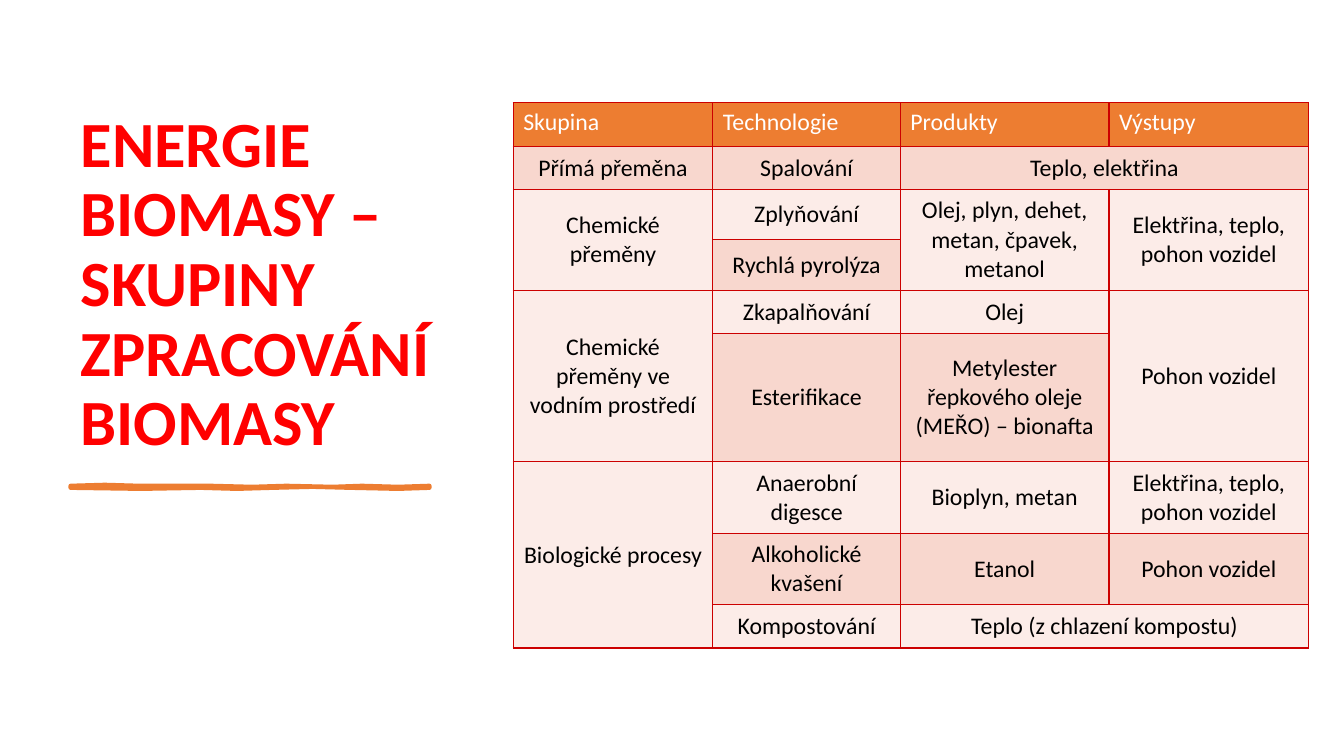
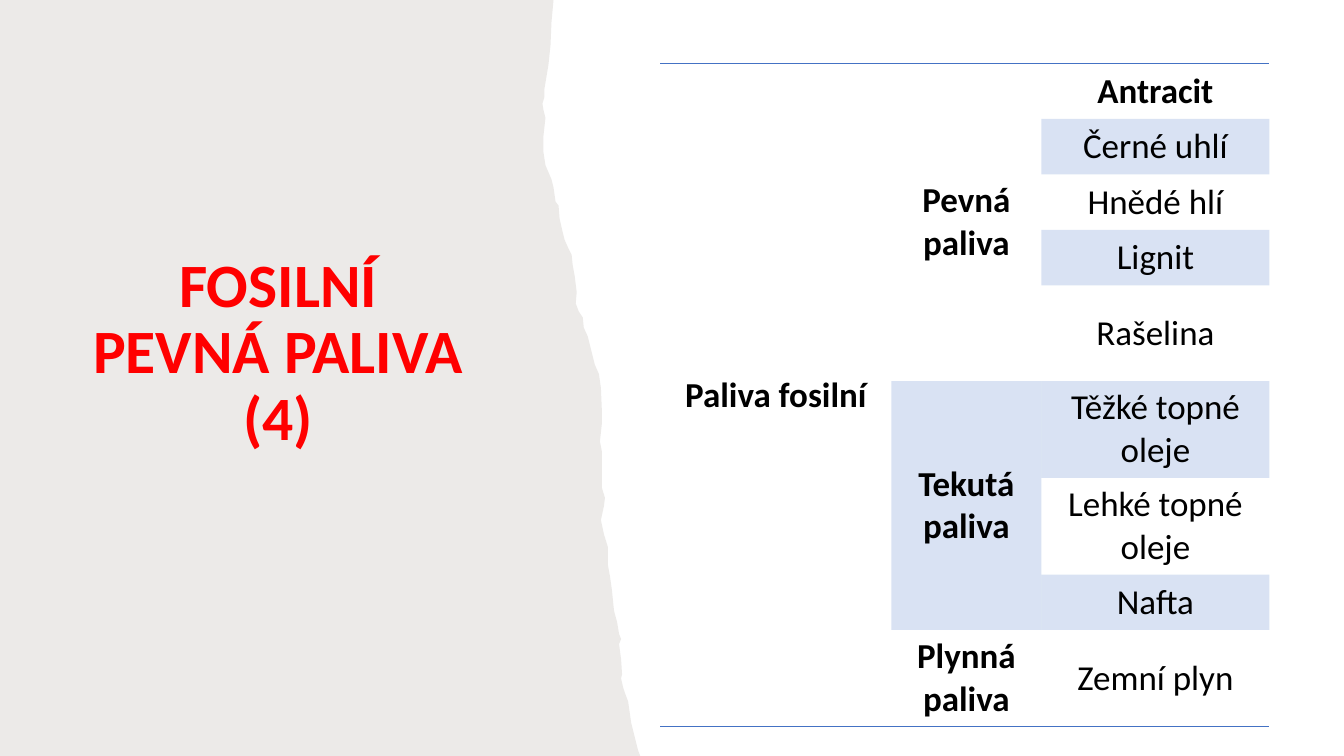
import lxml.etree
import pptx
import pptx.dml.color
import pptx.enum.text
import pptx.oxml.ns
import pptx.util

RGB = pptx.dml.color.RGBColor
ALIGN = pptx.enum.text.PP_ALIGN
ANCHOR = pptx.enum.text.MSO_ANCHOR
qn = pptx.oxml.ns.qn

# Shared look; 100 px make one inch
PX = 9144
FONT = "Calibri"
RED = RGB(0xFF, 0x00, 0x00)
WHITE = RGB(0xFF, 0xFF, 0xFF)
BLACK = RGB(0x00, 0x00, 0x00)
ORANGE = RGB(0xED, 0x7D, 0x31)
DARK_BAND = RGB(0xF8, 0xD7, 0xCE)
LIGHT_BAND = RGB(0xFC, 0xEC, 0xE8)
GRID_RED = RGB(0xCC, 0x00, 0x00)
BLUE = RGB(0x44, 0x72, 0xC4)
STONE = RGB(0x82, 0x76, 0x6A)
NO_STYLE = "{2D5ABB26-0587-4C30-8999-92F81FD0307C}"

# Table marks: the cell continues the one above or the one to the left
UP, LEFT = "^", "<"

BIOMASS = [
    ["Skupina", "Technologie", "Produkty", "Výstupy"],
    ["Přímá přeměna", "Spalování", "Teplo, elektřina", LEFT],
    ["Chemické přeměny", "Zplyňování",
     "Olej, plyn, dehet, metan, čpavek, metanol",
     "Elektřina, teplo, pohon vozidel"],
    [UP, "Rychlá pyrolýza", UP, UP],
    ["Chemické přeměny ve vodním prostředí", "Zkapalňování", "Olej",
     "Pohon vozidel"],
    [UP, "Esterifikace", "Metylester řepkového oleje (MEŘO) – bionafta", UP],
    ["Biologické procesy", "Anaerobní digesce", "Bioplyn, metan",
     "Elektřina, teplo, pohon vozidel"],
    [UP, "Alkoholické kvašení", "Etanol", "Pohon vozidel"],
    [UP, "Kompostování", "Teplo (z chlazení kompostu)", LEFT],
]
FUELS = [
    ["Paliva fosilní", "Pevná paliva", "Antracit"],
    [UP, UP, "Černé uhlí"],
    [UP, UP, "Hnědé hlí"],
    [UP, UP, "Lignit"],
    [UP, UP, "Rašelina"],
    [UP, "Tekutá paliva", "Těžké topné oleje"],
    [UP, UP, "Lehké topné oleje"],
    [UP, UP, "Nafta"],
    [UP, "Plynná paliva", "Zemní plyn"],
]

# Outlines in px
BRUSH_STROKE = [
    (70, 482), (104, 481), (138, 482), (209, 482), (250, 483), (284, 482),
    (330, 483), (359, 482), (395, 483), (426, 482), (426, 484), (395, 485),
    (348, 484), (310, 483), (270, 484), (235, 485), (199, 484), (140, 485),
    (70, 484)]
TORN_PANEL = [
    (0, 0), (549, 0), (547, 22), (546, 45), (544, 64), (540, 88), (540, 96),
    (538, 103), (539, 109), (541, 117), (539, 135), (539, 151), (541, 164),
    (544, 171), (547, 178), (549, 186), (551, 200), (554, 204), (555, 217),
    (558, 230), (560, 238), (564, 247), (567, 253), (568, 263), (570, 274),
    (572, 290), (571, 301), (574, 309), (578, 315), (579, 325), (583, 334),
    (587, 350), (590, 362), (594, 371), (596, 385), (597, 408), (597, 420),
    (595, 438), (597, 448), (597, 484), (600, 494), (599, 502), (596, 516),
    (599, 530), (603, 543), (603, 561), (605, 572), (607, 586), (609, 606),
    (612, 617), (614, 629), (616, 634), (614, 639), (616, 654), (617, 669),
    (616, 673), (618, 682), (620, 688), (623, 696), (626, 717), (633, 745),
    (635, 750), (0, 750)]


def px(n):
    return pptx.util.Emu(n * PX)


def style_text(tf, size, color, bold, align):
    for p in tf.paragraphs:
        p.alignment = align
        for r in p.runs:
            r.font.name = FONT
            r.font.size = pptx.util.Pt(size)
            r.font.bold = bold
            r.font.color.rgb = color


def set_opacity(parent, percent):
    color = parent.find(qn("a:solidFill")).find(qn("a:srgbClr"))
    lxml.etree.SubElement(color, qn("a:alpha"), val=str(percent * 1000))


def set_title(s, text, box, size, align):
    title = s.shapes.title
    title.left, title.top, title.width, title.height = map(px, box)
    tf = title.text_frame
    tf.text = text
    tf.word_wrap = True
    tf.auto_size = pptx.enum.text.MSO_AUTO_SIZE.NONE
    tf.vertical_anchor = ANCHOR.BOTTOM
    tf.paragraphs[0].line_spacing = 0.9
    style_text(tf, size, RED, True, align)


def add_outline(s, points, color):
    builder = s.shapes.build_freeform(*points[0], scale=PX)
    builder.add_line_segments(points[1:], close=True)
    sp = builder.convert_to_shape()
    sp.shadow.inherit = False
    sp.fill.solid()
    sp.fill.fore_color.rgb = color
    sp.line.fill.background()
    return sp


def set_borders(cell, edges, color):
    """Draw the named edges (letters of LRTB) and clear the others."""
    tcPr = cell._tc.get_or_add_tcPr()
    for i, edge in enumerate("LRTB"):
        ln = lxml.etree.Element(qn("a:ln" + edge), w=str(pptx.util.Pt(1)))
        tcPr.insert(i, ln)
        if edge in edges:
            fill = lxml.etree.SubElement(ln, qn("a:solidFill"))
            lxml.etree.SubElement(fill, qn("a:srgbClr"), val=str(color))
        else:
            lxml.etree.SubElement(ln, qn("a:noFill"))


def span(texts, row, col):
    """Last row and column covered by the cell that starts here."""
    last_row, last_col = row, col
    while last_row + 1 < len(texts) and texts[last_row + 1][col] == UP:
        last_row += 1
    while last_col + 1 < len(texts[row]) and texts[row][last_col + 1] == LEFT:
        last_col += 1
    return last_row, last_col


def add_grid(s, texts, left, top, widths, heights, style_cell):
    frame = s.shapes.add_table(len(heights), len(widths), px(left), px(top),
                               px(sum(widths)), px(sum(heights)))
    frame.element.find(".//" + qn("a:tableStyleId")).text = NO_STYLE
    table = frame.table
    table.first_row = table.horz_banding = False
    for column, width in zip(table.columns, widths):
        column.width = px(width)
    for row, height in zip(table.rows, heights):
        row.height = px(height)
    for i, row_texts in enumerate(texts):
        for j, text in enumerate(row_texts):
            cell = table.cell(i, j)
            cell.vertical_anchor = ANCHOR.MIDDLE
            if text not in (UP, LEFT):
                cell.text = text
                end = span(texts, i, j)
                if end != (i, j):
                    cell.merge(table.cell(*end))
            style_cell(cell, i, j)


def style_biomass_cell(cell, row, col):
    header = row == 0
    cell.fill.solid()
    if header:
        cell.fill.fore_color.rgb = ORANGE
        cell.vertical_anchor = ANCHOR.TOP
    else:
        cell.fill.fore_color.rgb = DARK_BAND if row % 2 else LIGHT_BAND
    style_text(cell.text_frame, 17, WHITE if header else BLACK, False,
               ALIGN.LEFT if header else ALIGN.CENTER)
    set_borders(cell, "LRTB", GRID_RED)


def style_fuel_cell(cell, row, col):
    if row % 2:
        cell.fill.solid()
        cell.fill.fore_color.rgb = BLUE
        set_opacity(cell._tc.get_or_add_tcPr(), 20)
    else:
        cell.fill.background()
    style_text(cell.text_frame, 25, BLACK, row == 0 or col < 2, ALIGN.CENTER)
    edges = {0: "TB", len(FUELS) - 1: "B"}.get(row, "")
    set_borders(cell, edges, BLUE)


def biomass_slide(prs):
    s = prs.slides.add_slide(prs.slide_layouts[5])
    set_title(s, "ENERGIE BIOMASY – SKUPINY ZPRACOVÁNÍ BIOMASY",
              (70, 70, 391, 391), 46, ALIGN.LEFT)
    # Brush stroke under the title
    stroke = add_outline(s, BRUSH_STROKE, ORANGE)
    stroke.line.color.rgb = ORANGE
    stroke.line.width = pptx.util.Pt(3)
    add_grid(s, BIOMASS, 509, 102, [198, 186, 207, 198],
             [43, 43, 50, 50, 43, 127, 71, 71, 43], style_biomass_cell)


def fuels_slide(prs):
    s = prs.slides.add_slide(prs.slide_layouts[5])
    # Torn paper panel, behind the title
    panel = add_outline(s, TORN_PANEL, STONE)
    set_opacity(panel.element.spPr, 15)
    s.shapes.title.element.addprevious(panel.element)
    set_title(s, "FOSILNÍ PEVNÁ PALIVA (4)", (78, 291, 396, 164), 44,
              ALIGN.CENTER)
    add_grid(s, FUELS, 655, 63, [229, 149, 226],
             [55, 55, 55, 55, 95, 96, 96, 55, 96], style_fuel_cell)


def main():
    prs = pptx.Presentation()
    prs.slide_width, prs.slide_height = px(1333), px(750)
    biomass_slide(prs)
    fuels_slide(prs)
    prs.save("out.pptx")


if __name__ == "__main__":
    main()
